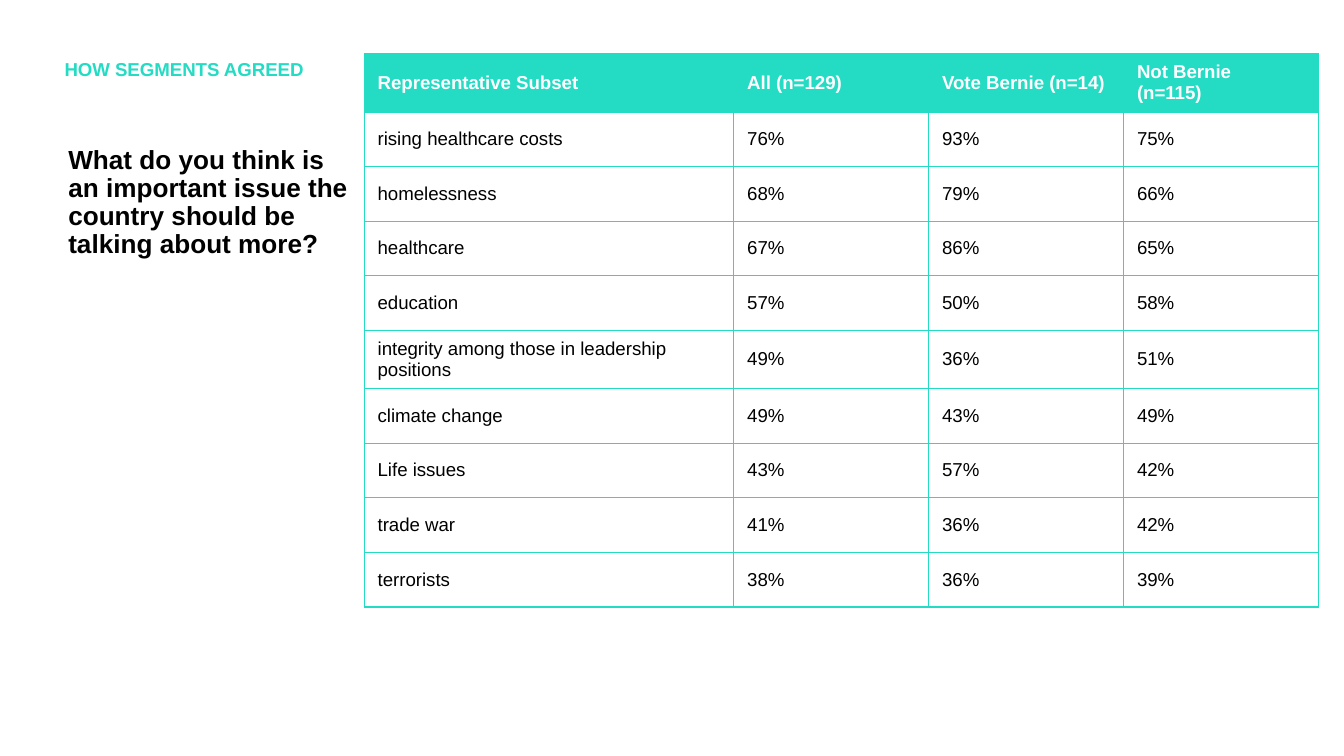
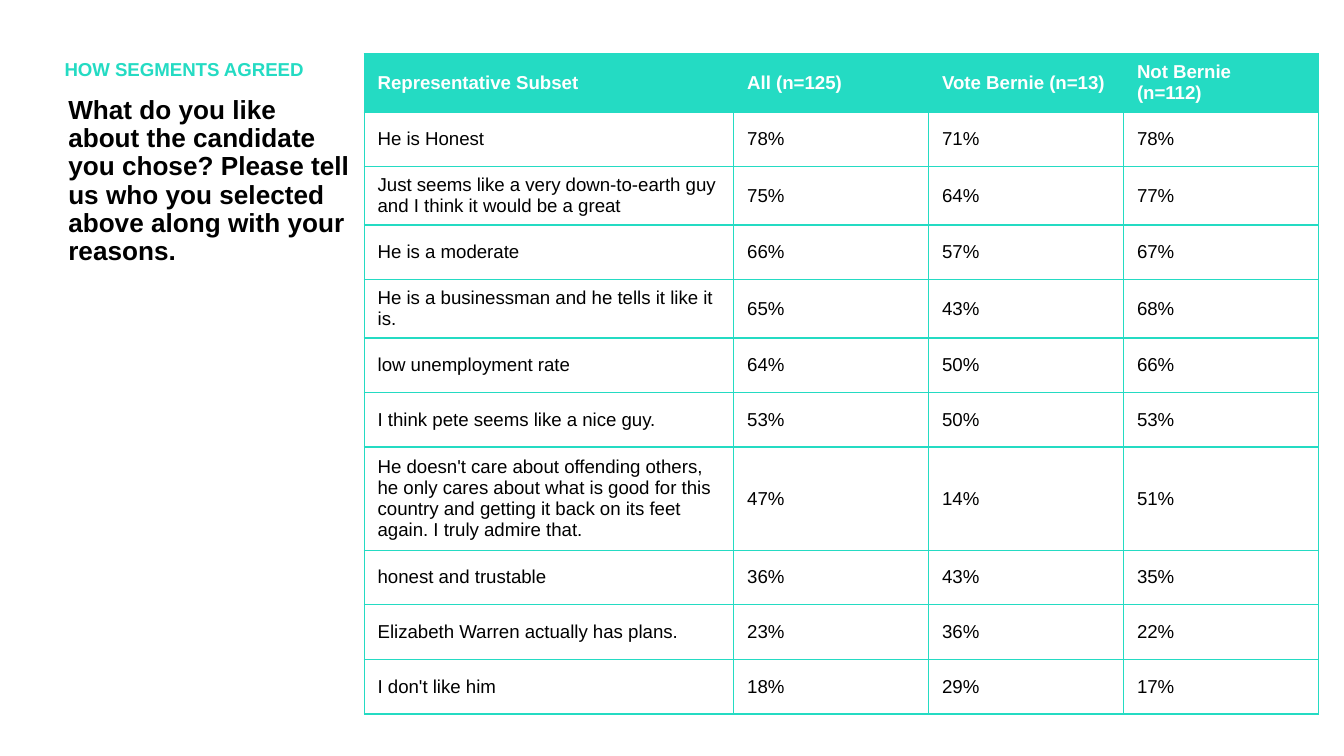
"""Build two slides that compare how voter segments agreed on survey answers."""
from pptx import Presentation
from pptx.dml.color import RGBColor
from pptx.enum.text import MSO_ANCHOR as Anchor, MSO_AUTO_SIZE as AutoSize, PP_ALIGN as Align
from pptx.oxml import parse_xml
from pptx.oxml.ns import nsdecls
from pptx.util import Inches, Pt

TEAL, BLACK, WHITE = "24DBC3", "000000", "FFFFFF"
FONT = "Arial"
TABLE_LEFT, TOP = 2.71, 0.4
ROW_HEIGHT = 4.06 / 10
COLUMN_WIDTHS = [2.75, 1.45, 1.45, 1.45]
QUESTION_LEFT, QUESTION_TOP = 0.41, 0.67
HEADING_LEFT = 0.38

surveys = [
    {
        "question": "What do you think is an important issue the country should be talking about more?",
        "inset": 0.42,
        "answers": [
            ("Representative Subset", "All (n=129)", "Vote Bernie (n=14)", "Not Bernie (n=115)"),
            ("rising healthcare costs", "76%", "93%", "75%"),
            ("homelessness", "68%", "79%", "66%"),
            ("healthcare", "67%", "86%", "65%"),
            ("education", "57%", "50%", "58%"),
            ("integrity among those in leadership positions", "49%", "36%", "51%"),
            ("climate change", "49%", "43%", "49%"),
            ("Life issues", "43%", "57%", "42%"),
            ("trade war", "41%", "36%", "42%"),
            ("terrorists", "38%", "36%", "39%"),
        ],
    },
    {
        "question": "What do you like about the candidate you chose? Please tell us who you "
                    "selected above along with your reasons.",
        "inset": 0.05,
        "answers": [
            ("Representative Subset", "All (n=125)", "Vote Bernie (n=13)", "Not Bernie (n=112)"),
            ("He is Honest", "78%", "71%", "78%"),
            ("Just seems like a very down-to-earth guy and I think it would be a great",
             "75%", "64%", "77%"),
            ("He is a moderate", "66%", "57%", "67%"),
            ("He is a businessman and he tells it like it is.", "65%", "43%", "68%"),
            ("low unemployment rate", "64%", "50%", "66%"),
            ("I think pete seems like a nice guy.", "53%", "50%", "53%"),
            ("He doesn't care about offending others, he only cares about what is good for "
             "this country and getting it back on its feet again. I truly admire that.",
             "47%", "14%", "51%"),
            ("honest and trustable", "36%", "43%", "35%"),
            ("Elizabeth Warren actually has plans.", "23%", "36%", "22%"),
            ("I don't like him", "18%", "29%", "17%"),
        ],
    },
]


def write(frame, text, size=10, color=BLACK, bold=False, spacing=1.0, inset=0.05):
    """Fill a text frame with one formatted, left-aligned paragraph."""
    frame.word_wrap = True
    frame.margin_left = frame.margin_right = Inches(0.1)
    frame.margin_top, frame.margin_bottom = Inches(inset), Inches(0.05)
    paragraph = frame.paragraphs[0]
    paragraph.alignment = Align.LEFT
    paragraph.line_spacing = spacing
    run = paragraph.add_run()
    run.text = text
    run.font.name, run.font.size, run.font.bold = FONT, Pt(size), bold
    run.font.color.rgb = RGBColor.from_string(color)


def paint(cell, color):
    """Give a cell its fill and the teal border on all four sides."""
    properties = cell._tc.get_or_add_tcPr()
    for side in ("lnL", "lnR", "lnT", "lnB"):
        properties.append(parse_xml(
            f'<a:{side} {nsdecls("a")} w="{Pt(0.75)}"><a:solidFill>'
            f'<a:srgbClr val="{TEAL}"/></a:solidFill></a:{side}>'))
    cell.fill.solid()
    cell.fill.fore_color.rgb = RGBColor.from_string(color)


deck = Presentation()
deck.slide_width, deck.slide_height = Inches(10), Inches(5.625)

for survey in surveys:
    slide = deck.slides.add_slide(deck.slide_layouts[5])

    heading = slide.shapes.title
    heading.left, heading.top = Inches(HEADING_LEFT), Inches(TOP)
    heading.width, heading.height = Inches(2.32), Inches(0.28)
    heading.text_frame.auto_size = AutoSize.NONE
    heading.text_frame.vertical_anchor = Anchor.TOP
    write(heading.text_frame, "HOW SEGMENTS AGREED", color=TEAL, bold=True, spacing=0.9)

    question = slide.shapes.add_textbox(
        Inches(QUESTION_LEFT), Inches(QUESTION_TOP),
        Inches(TABLE_LEFT - QUESTION_LEFT), Inches(4.41))
    write(question.text_frame, survey["question"], size=14, bold=True, spacing=0.9,
          inset=survey["inset"])

    answers = survey["answers"]
    agreement = slide.shapes.add_table(
        len(answers), len(COLUMN_WIDTHS), Inches(TABLE_LEFT), Inches(TOP),
        Inches(sum(COLUMN_WIDTHS)), Inches(ROW_HEIGHT * len(answers))).table
    agreement.horz_banding = False
    for column, width in zip(agreement.columns, COLUMN_WIDTHS):
        column.width = Inches(width)
    for row, values in enumerate(answers):
        is_header = row == 0
        agreement.rows[row].height = Inches(ROW_HEIGHT)
        for col, value in enumerate(values):
            cell = agreement.cell(row, col)
            cell.vertical_anchor = Anchor.MIDDLE
            write(cell.text_frame, value, color=WHITE if is_header else BLACK, bold=is_header)
            paint(cell, TEAL if is_header else WHITE)
        cell.margin_right = Inches(0.2)

deck.save("out.pptx")
